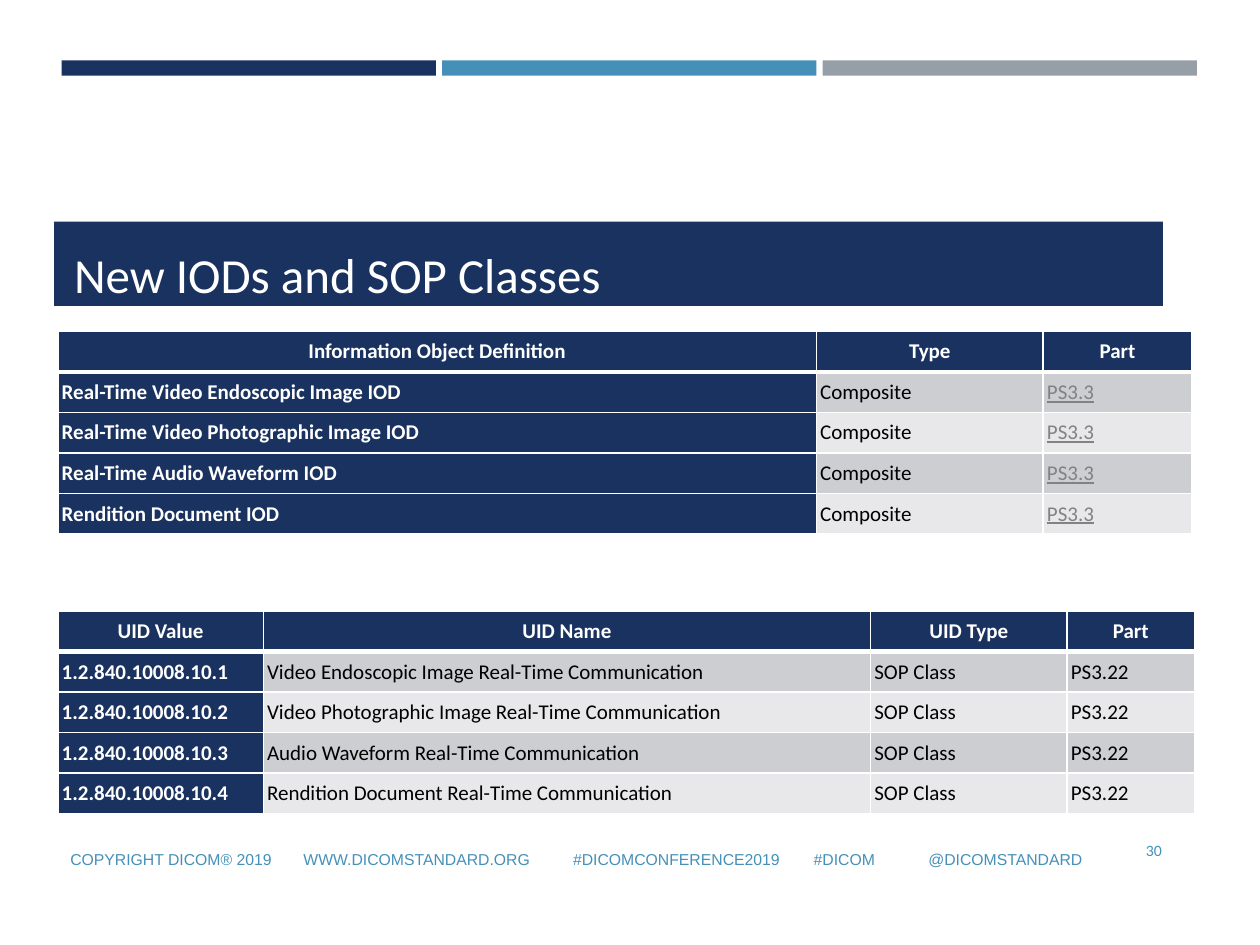
from lxml import etree
from pptx import Presentation
from pptx.dml.color import RGBColor
from pptx.enum.shapes import MSO_SHAPE
from pptx.enum.text import MSO_ANCHOR as ANCHOR, PP_ALIGN as ALIGN
from pptx.oxml.ns import qn
from pptx.util import Inches, Pt

NAVY, BLUE, GRAY, WHITE, BLACK = "1A3260", "4590B8", "969FA7", "FFFFFF", "000000"
LINK = "828282"
BANDS = ("CDCED2", "E8E8EA")
HEAD_TEXT = {"size": Pt(12), "name": "Calibri", "bold": True}
BODY_TEXT = {**HEAD_TEXT, "bold": False}
CELL_INSET = 0.03


def rgb(color):
    return RGBColor.from_string(color)


def add_bar(slide, left, top, width, height, color):
    s = slide.shapes.add_shape(MSO_SHAPE.RECTANGLE, *map(Inches, (left, top, width, height)))
    s.shadow.inherit = False
    s.fill.solid()
    s.fill.fore_color.rgb = rgb(color)
    s.line.fill.background()


def write(p, text, color, formats, align=ALIGN.LEFT):
    p.alignment = align
    r = p.add_run()
    r.text = text
    for name, value in formats.items():
        setattr(r.font, name, value)
    r.font.color.rgb = rgb(color)


def add_text(slide, box, text, color, formats, align=ALIGN.LEFT,
             anchor=ANCHOR.MIDDLE, tabs=(), inset_top=0.05):
    tf = slide.shapes.add_textbox(*map(Inches, box)).text_frame
    tf.word_wrap = True
    tf.vertical_anchor = anchor
    tf.margin_top = Inches(inset_top)
    p = tf.paragraphs[0]
    if tabs:
        tab_list = etree.SubElement(p._p.get_or_add_pPr(), qn("a:tabLst"))
        for pos in tabs:
            etree.SubElement(tab_list, qn("a:tab"), pos=str(Inches(pos)), algn="l")
    write(p, text, color, formats, align)


def set_borders(cell, top, bottom):
    tcPr = cell._tc.get_or_add_tcPr()
    for side, width in (("L", 1), ("R", 1), ("T", top), ("B", bottom)):
        ln = etree.SubElement(tcPr, qn(f"a:ln{side}"), w=str(Pt(width)))
        fill = etree.SubElement(ln, qn("a:solidFill"))
        etree.SubElement(fill, qn("a:srgbClr"), val=WHITE)


def add_grid(slide, top, widths, rows, link_column=None):
    """Table with a navy header row, a navy first column and banded body rows."""
    table = slide.shapes.add_table(len(rows), len(widths), Inches(0.46), Inches(top),
                                   Inches(sum(widths)), Inches(1.61)).table
    for column, width in zip(table.columns, widths):
        column.width = Inches(width)
    for i, row in enumerate(rows):
        for j, text in enumerate(row):
            cell = table.cell(i, j)
            head = i == 0 or j == 0
            # The header is set off by a thicker rule
            set_borders(cell, 3 if i == 1 else 1, 3 if i == 0 else 1)
            cell.fill.solid()
            cell.fill.fore_color.rgb = rgb(NAVY if head else BANDS[(i - 1) % 2])
            for side in ("left", "top", "right", "bottom"):
                setattr(cell, f"margin_{side}", Inches(CELL_INSET))
            linked = j == link_column and not head
            formats = {**(HEAD_TEXT if head else BODY_TEXT), "underline": linked}
            color = WHITE if head else LINK if linked else BLACK
            p = cell.text_frame.paragraphs[0]
            p.line_spacing = 1.15
            write(p, text, color, formats, ALIGN.CENTER if i == 0 else ALIGN.LEFT)


def main():
    prs = Presentation()
    prs.slide_width, prs.slide_height = Inches(10), Inches(7.5)
    slide = prs.slides.add_slide(prs.slide_layouts[6])

    # Top stripes
    for i, color in enumerate((NAVY, BLUE, GRAY)):
        add_bar(slide, 0.49 + i * 3.02, 0.48, 2.97, 0.12, color)

    # Title band, with its lower edge trimmed by a white bar
    add_bar(slide, 0.43, 1.76, 8.8, 1.01, NAVY)
    add_bar(slide, 0.22, 2.43, 9.26, 0.61, WHITE)
    add_text(slide, (0.49, 1.86, 8.74, 0.91), "New IODs and SOP Classes", WHITE,
             {"size": Pt(28), "name": "Calibri"}, anchor=ANCHOR.TOP, inset_top=0.08)

    # Footer and slide number
    footer = ("COPYRIGHT DICOM® 2019", "WWW.DICOMSTANDARD.ORG",
              "#DICOMCONFERENCE2019", "#DICOM", "@DICOMSTANDARD")
    add_text(slide, (0.46, 6.62, 8.8, 0.39), "\t".join(footer), BLUE,
             {"size": Pt(9), "name": "Arial"}, tabs=(1.85, 3.99, 5.9, 6.81))
    add_text(slide, (8.89, 6.51, 0.43, 0.47), "30", BLUE,
             {"size": Pt(9), "name": "Calibri"}, ALIGN.RIGHT)

    # SOP class table
    sop_names = ("Video Endoscopic Image", "Video Photographic Image",
                 "Audio Waveform", "Rendition Document")
    sop_rows = [("UID Value", "UID Name", "UID Type", "Part")]
    sop_rows += [(f"1.2.840.10008.10.{n}", f"{name} Real-Time Communication",
                  "SOP Class", "PS3.22") for n, name in enumerate(sop_names, 1)]
    add_grid(slide, 4.85, (1.63, 4.82, 1.56, 1.01), sop_rows)

    # Information object table
    iods = ("Real-Time Video Endoscopic Image", "Real-Time Video Photographic Image",
            "Real-Time Audio Waveform", "Rendition Document")
    iod_rows = [("Information Object Definition", "Type", "Part")]
    iod_rows += [(f"{name} IOD", "Composite", "PS3.3") for name in iods]
    add_grid(slide, 2.63, (6.02, 1.8, 1.18), iod_rows, link_column=2)

    prs.save("out.pptx")


if __name__ == "__main__":
    main()
